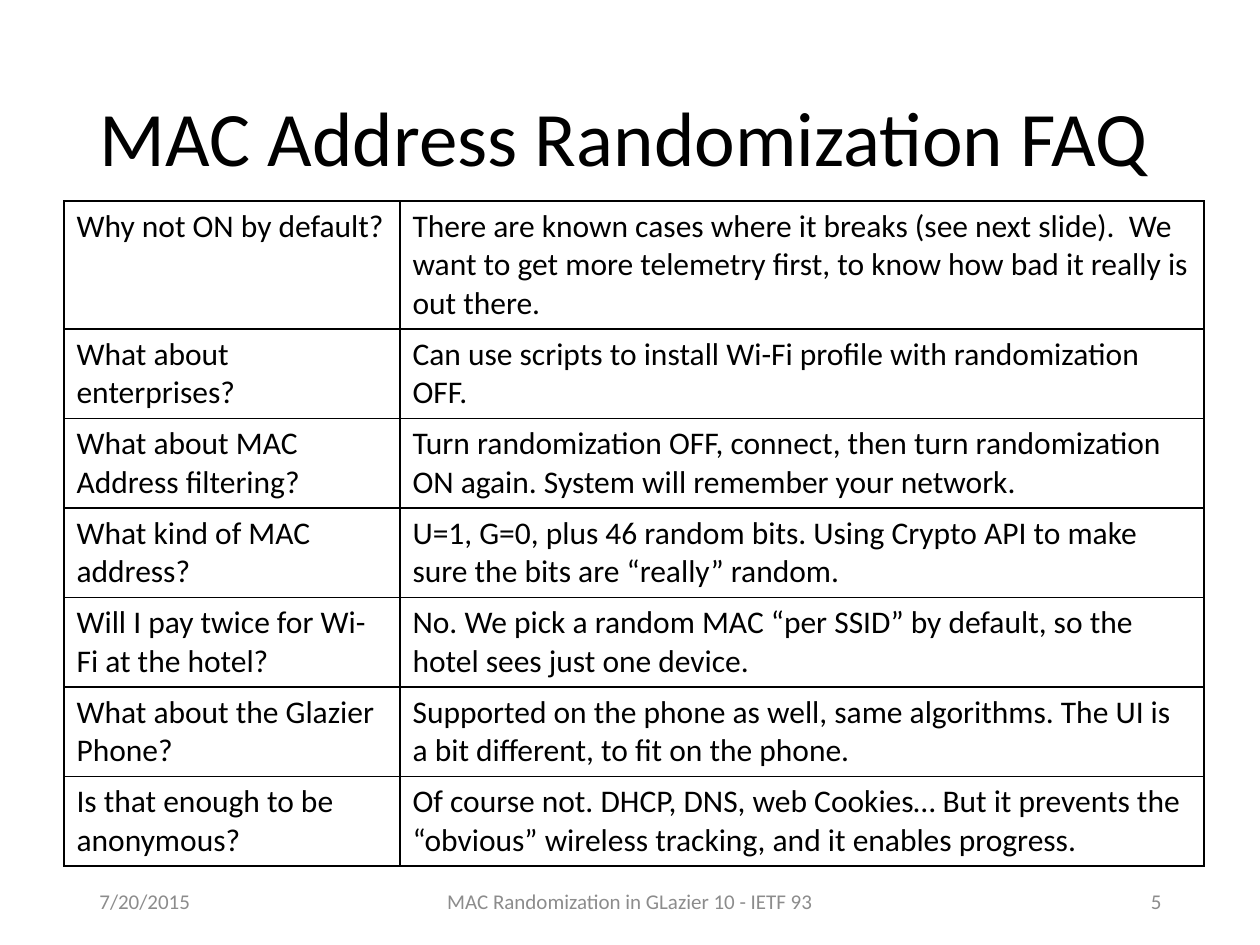
from dataclasses import dataclass

from lxml.etree import SubElement
from pptx import Presentation
from pptx.dml.color import RGBColor
from pptx.enum.text import MSO_ANCHOR as Anchor, PP_ALIGN as Align
from pptx.oxml.ns import qn
from pptx.util import Emu, Pt

PX = 914400 / 126
FONT = "Calibri"
BLACK = RGBColor(0x00, 0x00, 0x00)
GRAY = RGBColor(0x8C, 0x8C, 0x8C)

COLUMN_WIDTHS = (336, 804)
FIRST_ROW_HEIGHT = 128
ROW_HEIGHT = 89


@dataclass
class Question:
    question: str
    answer: str


@dataclass
class FooterItem:
    text: str
    left: int
    width: int
    align: Align


QUESTIONS = [
    Question("Why not ON by default?",
             "There are known cases where it breaks (see next slide).  We want to get "
             "more telemetry first, to know how bad it really is out there."),
    Question("What about enterprises?",
             "Can use scripts to install Wi-Fi profile with randomization OFF."),
    Question("What about MAC Address filtering?",
             "Turn randomization OFF, connect, then turn randomization ON again. "
             "System will remember your network."),
    Question("What kind of MAC address?",
             "U=1, G=0, plus 46 random bits. Using Crypto API to make sure the bits "
             "are “really” random."),
    Question("Will I pay twice for Wi-Fi at the hotel?",
             "No. We pick a random MAC “per SSID” by default, so the hotel sees just "
             "one device."),
    Question("What about the Glazier Phone?",
             "Supported on the phone as well, same algorithms. The UI is a bit "
             "different, to fit on the phone."),
    Question("Is that enough to be anonymous?",
             "Of course not. DHCP, DNS, web Cookies… But it prevents the “obvious” "
             "wireless tracking, and it enables progress."),
]

FOOTER = [
    FooterItem("7/20/2015", 87, 284, Align.LEFT),
    FooterItem("MAC Randomization in GLazier 10 - IETF 93", 417, 426, Align.CENTER),
    FooterItem("5", 890, 284, Align.RIGHT),
]


def px(value: int) -> Emu:
    return Emu(round(value * PX))


def write(text_frame, text: str, size: int, color: RGBColor, align=Align.LEFT) -> None:
    text_frame.text = text
    paragraph = text_frame.paragraphs[0]
    paragraph.alignment = align
    font = paragraph.runs[0].font
    font.name, font.size, font.bold = FONT, Pt(size), False
    font.color.rgb = color


def add_borders(cell) -> None:
    properties = cell._tc.get_or_add_tcPr()
    for side in ("a:lnL", "a:lnR", "a:lnT", "a:lnB"):
        line = SubElement(properties, qn(side), w=str(Pt(1)))
        fill = SubElement(line, qn("a:solidFill"))
        SubElement(fill, qn("a:srgbClr"), val=str(BLACK))


def add_title(slide, text: str) -> None:
    title = slide.shapes.title
    title.left, title.top, title.width, title.height = px(87), px(50), px(1086), px(183)
    write(title.text_frame, text, 44, BLACK)
    title.text_frame.vertical_anchor = Anchor.MIDDLE
    title.text_frame.paragraphs[0].line_spacing = 0.9


def add_question_table(slide, questions: list[Question]) -> None:
    height = FIRST_ROW_HEIGHT + ROW_HEIGHT * (len(questions) - 1)
    table = slide.shapes.add_table(len(questions), len(COLUMN_WIDTHS), px(64), px(201),
                                   px(sum(COLUMN_WIDTHS)), px(height)).table
    table.first_row = table.horz_banding = False
    for column, width in zip(table.columns, COLUMN_WIDTHS):
        column.width = px(width)
    for index, (row, item) in enumerate(zip(table.rows, questions)):
        row.height = px(ROW_HEIGHT if index else FIRST_ROW_HEIGHT)
        for cell, text in zip(row.cells, (item.question, item.answer)):
            write(cell.text_frame, text, 18, BLACK)
            add_borders(cell)
            cell.fill.background()


def add_footer_item(slide, item: FooterItem) -> None:
    box = slide.shapes.add_textbox(px(item.left), px(876), px(item.width), px(50))
    box.text_frame.word_wrap = True
    box.text_frame.vertical_anchor = Anchor.MIDDLE
    write(box.text_frame, item.text, 12, GRAY, item.align)


def main() -> None:
    presentation = Presentation()
    presentation.slide_width, presentation.slide_height = px(1260), px(945)
    # Title-only layout
    slide = presentation.slides.add_slide(presentation.slide_layouts[5])
    add_title(slide, "MAC Address Randomization FAQ")
    # Questions and answers
    add_question_table(slide, QUESTIONS)
    # Date, footer and slide number
    for item in FOOTER:
        add_footer_item(slide, item)
    presentation.save("out.pptx")


if __name__ == "__main__":
    main()
